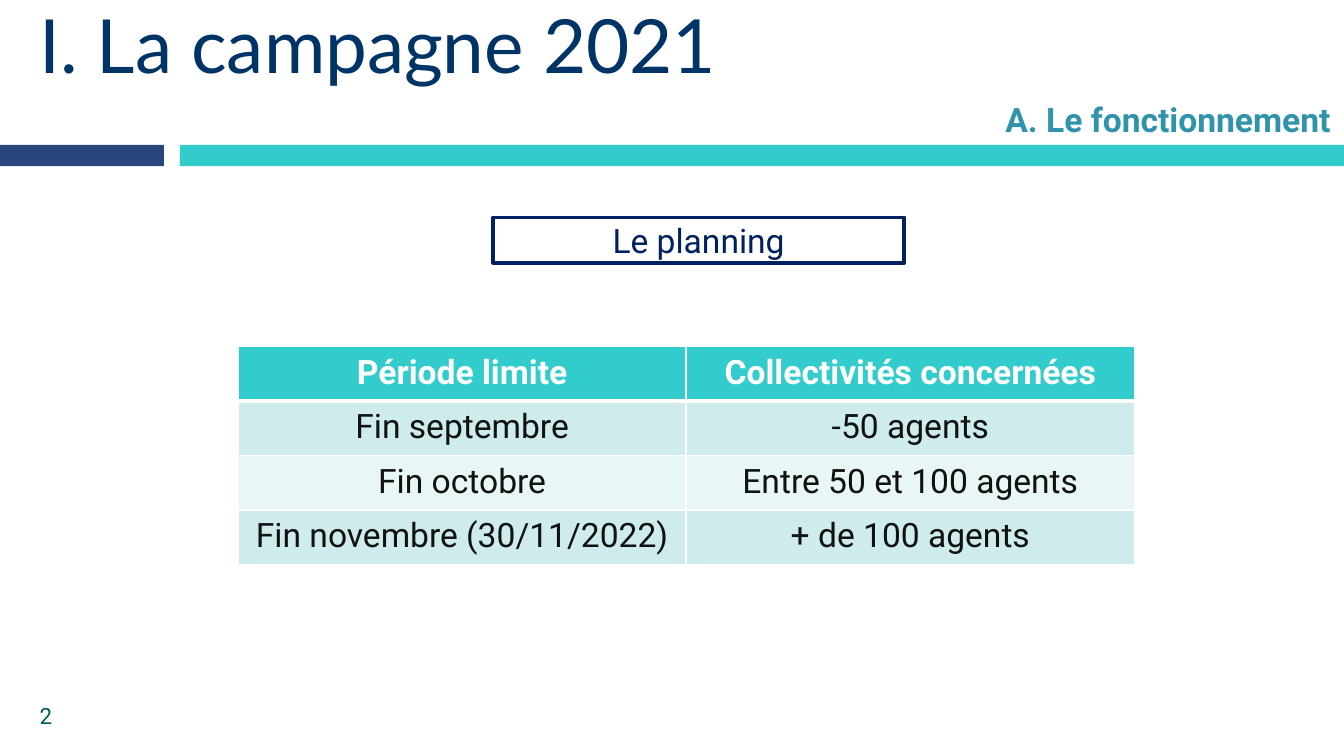
import pptx
import pptx.util
import pptx.dml.color
import pptx.enum.shapes
import pptx.enum.text
import pptx.oxml
import pptx.oxml.ns

Cm = pptx.util.Cm
Pt = pptx.util.Pt
ALIGN = pptx.enum.text.PP_ALIGN
MID = pptx.enum.text.MSO_ANCHOR.MIDDLE
TOP = pptx.enum.text.MSO_ANCHOR.TOP

HUES = {
    "title": "003366",
    "sub": "2F93AB",
    "teal": "33CCCC",
    "blue": "2A467E",
    "navy": "002060",
    "page": "005B59",
    "ink": "111111",
    "white": "FFFFFF",
    "odd": "CEECEC",
    "even": "E8F6F6",
}

ROWS = [
    ("Période limite", "Collectivités concernées"),
    ("Fin septembre", "-50 agents"),
    ("Fin octobre", "Entre 50 et 100 agents"),
    ("Fin novembre (30/11/2022)", "+ de 100 agents"),
]


def tint(name):
    return pptx.dml.color.RGBColor.from_string(HUES[name])


def write(frame, text, size, hue, font="Roboto", bold=False,
          align=ALIGN.LEFT, anchor=MID):
    """Put one formatted run into a text frame."""
    frame.word_wrap = True
    frame.vertical_anchor = anchor
    para = frame.paragraphs[0]
    para.alignment = align
    run = para.add_run()
    run.text = text
    run.font.size = Pt(size)
    run.font.name = font
    run.font.bold = bold
    run.font.color.rgb = tint(hue)


def add_rect(slide, box, fill=None, line=None):
    rect = slide.shapes.add_shape(
        pptx.enum.shapes.MSO_SHAPE.RECTANGLE, *map(Cm, box))
    rect.shadow.inherit = False
    if fill:
        rect.fill.solid()
        rect.fill.fore_color.rgb = tint(fill)
    else:
        rect.fill.background()
    if line:
        rect.line.color.rgb = tint(line)
        rect.line.width = Pt(2)
    else:
        rect.line.fill.background()
    return rect


def add_text(slide, box, *args, **style):
    frame = slide.shapes.add_textbox(*map(Cm, box)).text_frame
    write(frame, *args, **style)


def add_title(slide, box, text):
    title = slide.shapes.title
    title.left, title.top, title.width, title.height = map(Cm, box)
    frame = title.text_frame
    frame.auto_size = pptx.enum.text.MSO_AUTO_SIZE.NONE
    props = frame.paragraphs[0]._p.get_or_add_pPr()
    props.set("marL", str(Cm(1.25)))
    props.set("indent", "0")
    write(frame, text, 40, "title", font="Lato")


def add_band(slide, box):
    """Draw a short blue bar and a long teal bar with a gap between."""
    left, top, width, height = box
    short, gap = 3.1, 0.3
    start = short + gap
    add_rect(slide, (left + start, top, width - start, height), "teal")
    add_rect(slide, (left, top, short, height), "blue")


def add_edges(cell, row):
    """Give a cell white borders, thicker under the header row."""
    props = cell._tc.get_or_add_tcPr()
    widths = {"L": 1, "R": 1, "T": 3 if row == 1 else 1,
              "B": 3 if row == 0 else 1}
    for side, width in widths.items():
        props.append(pptx.oxml.parse_xml(
            f'<a:ln{side} {pptx.oxml.ns.nsdecls("a")} w="{Pt(width)}">'
            f'<a:solidFill><a:srgbClr val="{HUES["white"]}"/></a:solidFill>'
            f'</a:ln{side}>'))


def add_plan(slide, box):
    table = slide.shapes.add_table(
        len(ROWS), len(ROWS[0]), *map(Cm, box)).table
    for row, texts in enumerate(ROWS):
        head = row == 0
        fill = "teal" if head else "odd" if row % 2 else "even"
        for col, text in enumerate(texts):
            cell = table.cell(row, col)
            add_edges(cell, row)
            cell.fill.solid()
            cell.fill.fore_color.rgb = tint(fill)
            write(cell.text_frame, text, 18, "white" if head else "ink",
                  bold=head, align=ALIGN.CENTER, anchor=TOP)


def main():
    deck = pptx.Presentation()
    deck.slide_width, deck.slide_height = Cm(25.4), Cm(14.29)
    slide = deck.slides.add_slide(deck.slide_layouts[5])

    add_band(slide, (0, 2.74, 25.4, 0.4))
    add_text(slide, (0.5, 13.14, 5.92, 0.76), "2", 12, "page")
    label = add_rect(slide, (9.32, 4.11, 7.77, 0.86), line="navy")
    write(label.text_frame, "Le planning", 18, "navy", align=ALIGN.CENTER)
    add_plan(slide, (4.5, 6.55, 16.94, 4.12))
    add_title(slide, (-0.76, -0.25, 22.4, 2.16), "I. La campagne 2021")
    add_text(slide, (12.6, 1.75, 12.8, 1.02), "A. Le fonctionnement", 18,
             "sub", bold=True, align=ALIGN.RIGHT, anchor=TOP)

    deck.save("out.pptx")


if __name__ == "__main__":
    main()
